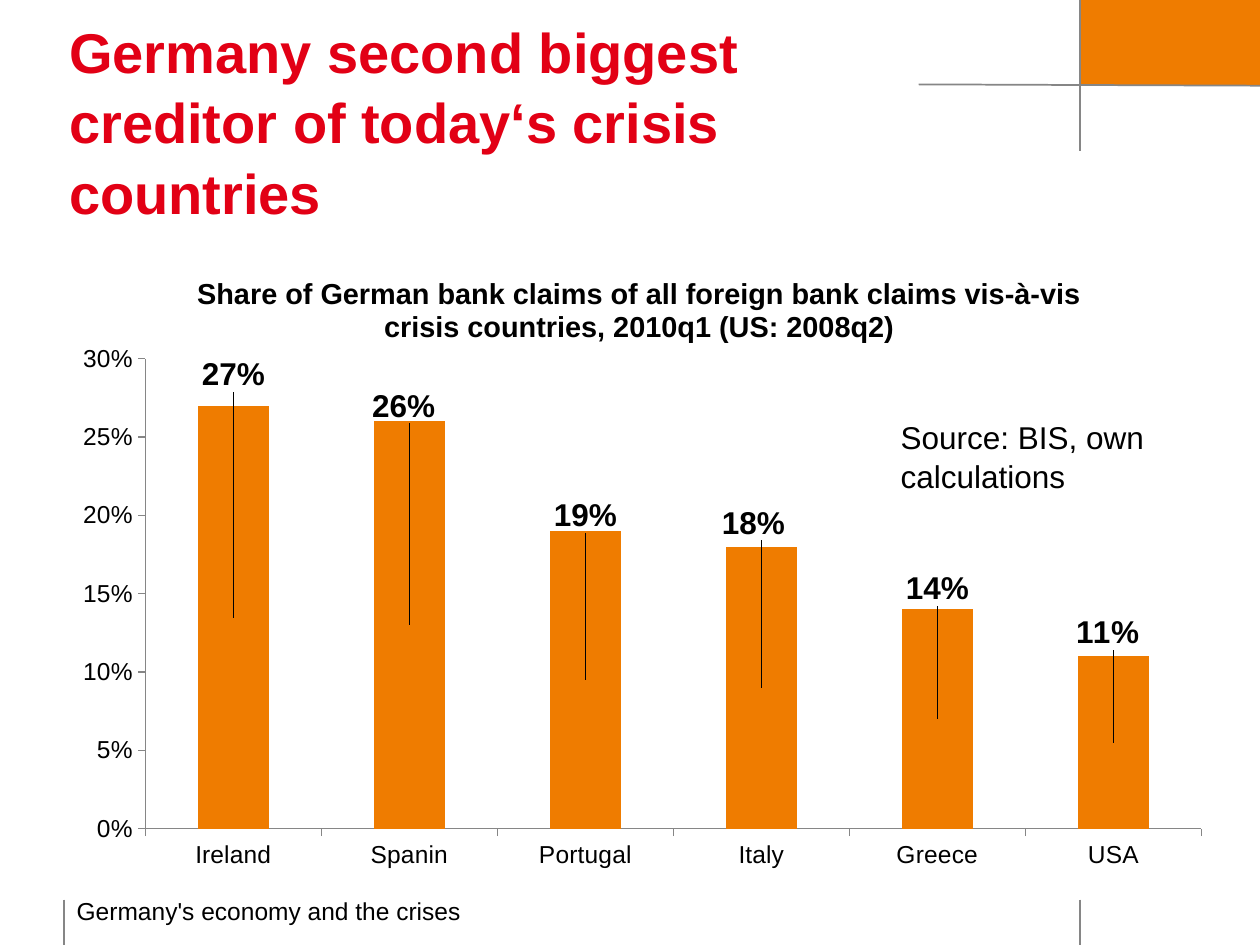
"""Build the slide on German bank claims against crisis countries."""
from typing import NamedTuple

from lxml.etree import SubElement
from pptx import Presentation
from pptx.chart.data import CategoryChartData
from pptx.dml.color import RGBColor
from pptx.enum.chart import XL_CHART_TYPE as ChartType, XL_TICK_MARK as Tick
from pptx.enum.shapes import MSO_CONNECTOR as Conn, MSO_SHAPE as Shape
from pptx.enum.text import MSO_ANCHOR as Anchor
from pptx.oxml import parse_xml
from pptx.oxml.ns import nsdecls, qn
from pptx.util import Inches, Pt

ORANGE = RGBColor(0xEF, 0x7C, 0x00)
GREY = RGBColor(0x86, 0x86, 0x86)
RED = RGBColor(0xE2, 0x00, 0x15)
BLACK = RGBColor(0x00, 0x00, 0x00)
FONT = "Arial"
COLS, ROWS = 100, 75
SIDE, CROSS, FOOT = 5.1, 85.7, 71.4
AXIS_MAX = 0.3
PLOT = {"x": 0.07, "y": 0.18, "w": 0.91, "h": 0.74}


class Box(NamedTuple):
    """A rectangle in grid columns and rows."""
    col: float
    row: float
    cols: float
    rows: float


class Rule(NamedTuple):
    """A line between two grid points."""
    col1: float
    row1: float
    col2: float
    row2: float


class Text(NamedTuple):
    """A text box with its format."""
    box: Box
    text: str
    size: int
    color: RGBColor = BLACK
    bold: bool = False
    anchor: Anchor = Anchor.TOP
    spacing: float = 1.0


class Bar(NamedTuple):
    """A column, its label's height on the axis and its sideways shift."""
    country: str
    share: float
    label_at: float
    shift: float = 0


RULES = (
    Rule(CROSS, 0, CROSS, 12),
    Rule(72.9, 6.7, COLS, 6.8),
    Rule(SIDE, FOOT, SIDE, ROWS),
    Rule(CROSS, FOOT, CROSS, ROWS),
)
HEADING = Text(Box(4.5, 2.9, 66.1, 15.5),
               "Germany second biggest creditor of today‘s crisis countries",
               32, RED, True, Anchor.BOTTOM, 1.05)
FOOTER = Text(Box(SIDE, 70.6, 79.5, 3.6), "Germany's economy and the crises", 14)
SOURCE = Text(Box(70.5, 32.5, 24.4, 7.1), "Source: BIS, own calculations", 18, spacing=1.05)
CHART_BOX = Box(SIDE, 19.4, 92.1, 50.4)
CHART_TITLE = ("Share of German bank claims of all foreign bank claims vis-à-vis "
               "crisis countries, 2010q1 (US: 2008q2)")
BARS = (
    Bar("Ireland", 0.27, 0.29),
    Bar("Spanin", 0.26, 0.27, -0.005),
    Bar("Portugal", 0.19, 0.2),
    Bar("Italy", 0.18, 0.195, -0.007),
    Bar("Greece", 0.14, 0.153),
    Bar("USA", 0.11, 0.125, -0.005),
)


def grid(prs, *points: float) -> list[int]:
    """Turn alternating columns and rows into slide lengths."""
    steps = (prs.slide_width / COLS, prs.slide_height / ROWS)
    return [round(n * steps[i % 2]) for i, n in enumerate(points)]


def style(font, **values) -> None:
    """Apply format values to a font."""
    font.color.rgb = values.pop("color", BLACK)
    for name, value in {"name": FONT, **values}.items():
        setattr(font, name, value)


def layout(**values) -> object:
    """Make a manual chart layout from shares of the chart."""
    el = parse_xml(f"<c:layout {nsdecls('c')}><c:manualLayout/></c:layout>")
    for tag, value in values.items():
        SubElement(el[0], qn(f"c:{tag}")).set("val", str(value))
    return el


def draw_rule(prs, s, rule: Rule) -> None:
    """Draw a thin grey line."""
    line = s.shapes.add_connector(Conn.STRAIGHT, *grid(prs, *rule))
    line.line.color.rgb = GREY
    line.line.width = Pt(1)
    SubElement(line._element.spPr, qn("a:effectLst"))


def draw_text(prs, s, item: Text) -> None:
    """Draw a wrapped text box."""
    tf = s.shapes.add_textbox(*grid(prs, *item.box)).text_frame
    tf.word_wrap = True
    tf.vertical_anchor = item.anchor
    p = tf.paragraphs[0]
    p.line_spacing = item.spacing
    r = p.add_run()
    r.text = item.text
    style(r.font, size=Pt(item.size), color=item.color, bold=item.bold)


def draw_corner(prs, s) -> None:
    """Draw the orange block in the top corner."""
    sp = s.shapes.add_shape(Shape.RECTANGLE, *grid(prs, CROSS, 0, COLS - CROSS, 6.8))
    sp.shadow.inherit = False
    sp.fill.solid()
    sp.fill.fore_color.rgb = ORANGE
    sp.line.fill.background()


def style_axes(chart) -> None:
    """Format both axes of the chart."""
    for axis in (chart.category_axis, chart.value_axis):
        axis.has_major_gridlines = False
        axis.major_tick_mark = Tick.OUTSIDE
        axis.minor_tick_mark = Tick.NONE
        axis.format.line.color.rgb = GREY
    formats = {"minimum_scale": 0, "maximum_scale": AXIS_MAX, "major_unit": 0.05}
    for name, value in formats.items():
        setattr(chart.value_axis, name, value)
    chart.value_axis.tick_labels.number_format = "0%"
    chart.value_axis.tick_labels.number_format_is_linked = False


def place_labels(series) -> None:
    """Show each value above its column."""
    labels = series.data_labels
    formats = {"show_value": True, "number_format": "0%", "number_format_is_linked": False}
    for name, value in formats.items():
        setattr(labels, name, value)
    style(labels.font, size=Pt(18), bold=True)
    for i, bar in enumerate(BARS):
        style(series.points[i].data_label.font, size=Pt(18), bold=True)
        rise = (bar.label_at - bar.share / 2) / AXIS_MAX * PLOT["h"]
        idx = labels._element.findall(qn("c:dLbl"))[i].find(qn("c:idx"))
        idx.addnext(layout(x=bar.shift, y=round(-rise, 3)))


def draw_chart(prs, s) -> None:
    """Draw the column chart of German claims."""
    data = CategoryChartData(number_format="0%")
    data.categories = [bar.country for bar in BARS]
    data.add_series("Series 1", [bar.share for bar in BARS])
    chart = s.shapes.add_chart(ChartType.COLUMN_STACKED, *grid(prs, *CHART_BOX), data).chart
    style(chart.font, size=Pt(14))
    chart.has_legend = False
    chart.has_title = True
    title = chart.chart_title
    r = title.text_frame.paragraphs[0].add_run()
    r.text = CHART_TITLE
    style(r.font, size=Pt(16.5), bold=True)
    title.include_in_layout = True
    for old in title._element.findall(qn("c:layout")):
        title._element.remove(old)
    title._element.find(qn("c:tx")).addnext(
        layout(xMode="edge", yMode="edge", x=0.11, y=0.04))
    plot = chart.plots[0]
    for name, value in {"gap_width": 150, "overlap": 100, "vary_by_categories": False}.items():
        setattr(plot, name, value)
    area = chart._chartSpace.chart.plotArea
    for old in area.findall(qn("c:layout")):
        area.remove(old)
    area.insert(0, layout(layoutTarget="inner", xMode="edge", yMode="edge", **PLOT))
    series = plot.series[0]
    series.format.fill.solid()
    series.format.fill.fore_color.rgb = ORANGE
    style_axes(chart)
    place_labels(series)


def main() -> None:
    """Build and save the slide."""
    prs = Presentation()
    prs.slide_width, prs.slide_height = Inches(10), Inches(7.5)
    s = prs.slides.add_slide(prs.slide_layouts[6])
    draw_corner(prs, s)
    for rule in RULES:
        draw_rule(prs, s, rule)
    for item in (HEADING, FOOTER):
        draw_text(prs, s, item)
    draw_chart(prs, s)
    draw_text(prs, s, SOURCE)
    prs.save("out.pptx")


if __name__ == "__main__":
    main()
